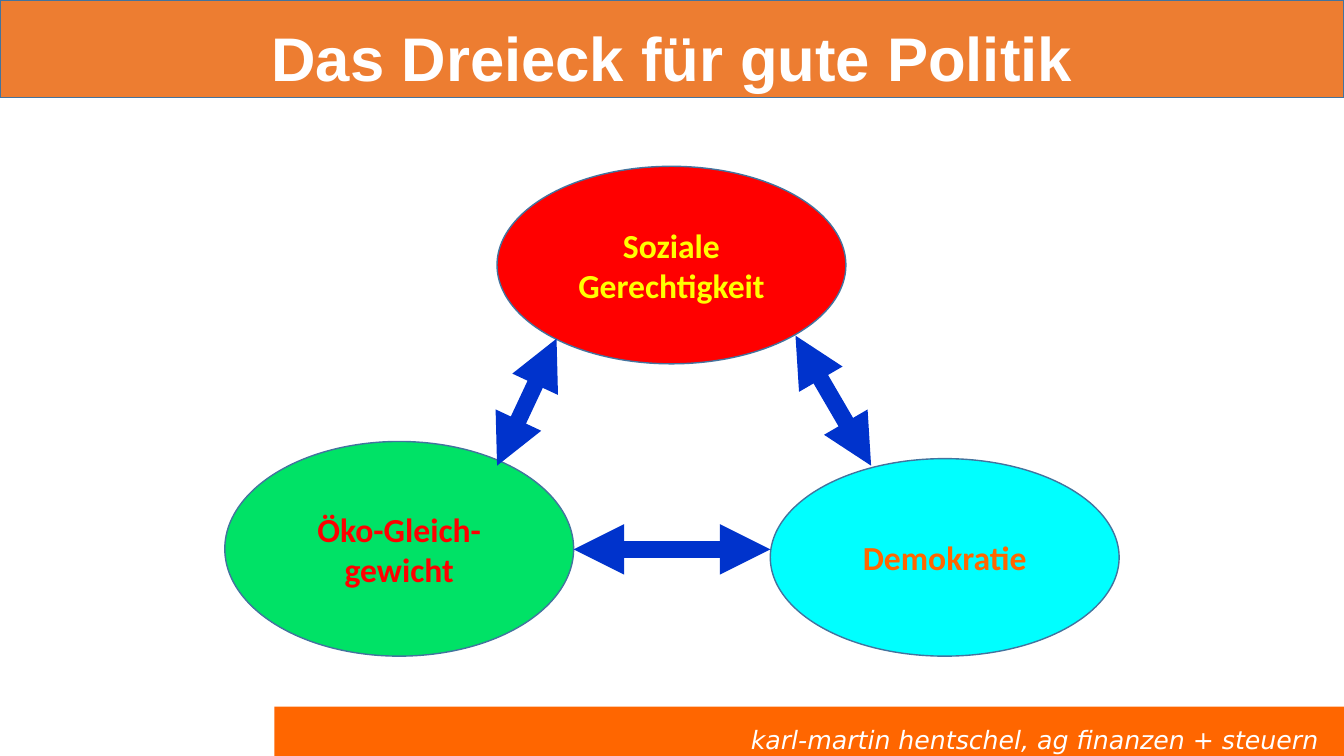
from lxml.etree import SubElement
from pptx import Presentation
from pptx.dml.color import RGBColor
from pptx.enum.shapes import MSO_CONNECTOR, MSO_SHAPE
from pptx.enum.text import MSO_ANCHOR, PP_ALIGN
from pptx.oxml.ns import qn
from pptx.util import Inches, Pt

WHITE = RGBColor(0xFF, 0xFF, 0xFF)
HEADER_ORANGE = RGBColor(0xED, 0x7D, 0x31)
FOOTER_ORANGE = RGBColor(0xFF, 0x66, 0x00)
OUTLINE = RGBColor(0x43, 0x73, 0x9E)
ARROW_BLUE = RGBColor(0x00, 0x33, 0xCC)
RED = RGBColor(0xFF, 0x00, 0x00)
YELLOW = RGBColor(0xFF, 0xFF, 0x00)
GREEN = RGBColor(0x00, 0xE2, 0x66)
CYAN = RGBColor(0x00, 0xFF, 0xFF)

# Corners of the triangle: text, box, fill colour, text colour
CORNERS = [
    ("Soziale Gerechtigkeit", (4.93, 1.65, 3.46, 1.96), RED, YELLOW),
    ("Öko-Gleich-gewicht", (2.23, 4.38, 3.46, 2.13), GREEN, RED),
    ("Demokratie", (7.64, 4.55, 3.46, 1.96), CYAN, FOOTER_ORANGE),
]
# Sides of the triangle: start and end points
SIDES = [
    ((5.52, 3.36), (4.93, 4.62)),
    ((7.89, 3.33), (8.64, 4.62)),
    ((7.64, 5.45), (5.69, 5.45)),
]


def add_filled_shape(page, kind, box, fill, outline=None):
    shape = page.shapes.add_shape(kind, *map(Inches, box))
    shape.shadow.inherit = False
    shape.fill.solid()
    shape.fill.fore_color.rgb = fill
    if outline is None:
        shape.line.fill.background()
    else:
        shape.line.color.rgb = outline
        shape.line.width = Pt(1)
    return shape


def set_text(shape, text, font_name, size, color, align=PP_ALIGN.CENTER,
             bold=False, italic=False, spacing=1.0):
    frame = shape.text_frame
    frame.word_wrap = True
    frame.vertical_anchor = MSO_ANCHOR.MIDDLE
    para = frame.paragraphs[0]
    para.text = text
    para.alignment = align
    para.line_spacing = spacing
    font = para.font
    font.name, font.size = font_name, Pt(size)
    font.bold, font.italic = bold, italic
    font.color.rgb = color


def add_header(page, box):
    left, top, width, height = box
    add_filled_shape(page, MSO_SHAPE.RECTANGLE, box, HEADER_ORANGE, OUTLINE)
    title_box = (left + 0.92, top + 0.06, width - 1.83, height - 0.04)
    title = page.shapes.add_textbox(*map(Inches, title_box))
    set_text(title, "Das Dreieck für gute Politik", "Arial", 44, WHITE,
             bold=True, spacing=1.1)


def add_footer(page, box):
    footer = add_filled_shape(page, MSO_SHAPE.RECTANGLE, box, FOOTER_ORANGE)
    set_text(footer, "karl-martin hentschel, ag finanzen + steuern",
             "DejaVu Sans", 18, WHITE, PP_ALIGN.RIGHT, italic=True, spacing=1.5)
    footer.text_frame.margin_right = Inches(0.25)


def add_double_arrow(page, start, end):
    arrow = page.shapes.add_connector(
        MSO_CONNECTOR.STRAIGHT, *map(Inches, start + end))
    arrow.line.color.rgb = ARROW_BLUE
    arrow.line.width = Pt(12)
    line = arrow.line._get_or_add_ln()
    for tag in ("a:headEnd", "a:tailEnd"):
        SubElement(line, qn(tag), type="triangle")
    SubElement(arrow._element.spPr, qn("a:effectLst"))


def add_triangle(page, box):
    left, top = box
    for text, (x, y, width, height), fill, color in CORNERS:
        corner_box = (left + x, top + y, width, height)
        corner = add_filled_shape(page, MSO_SHAPE.OVAL, corner_box, fill, OUTLINE)
        set_text(corner, text, "Calibri", 24, color, bold=True)
    for side in SIDES:
        start, end = ((left + x, top + y) for x, y in side)
        add_double_arrow(page, start, end)


def main():
    deck = Presentation()
    deck.slide_width, deck.slide_height = Inches(13.33), Inches(7.5)
    page = deck.slides.add_slide(deck.slide_layouts[6])
    add_header(page, (0, 0, 13.33, 0.97))
    add_footer(page, (2.72, 7.01, 10.61, 0.5))
    add_triangle(page, (0, 0))
    deck.save("out.pptx")


if __name__ == "__main__":
    main()
